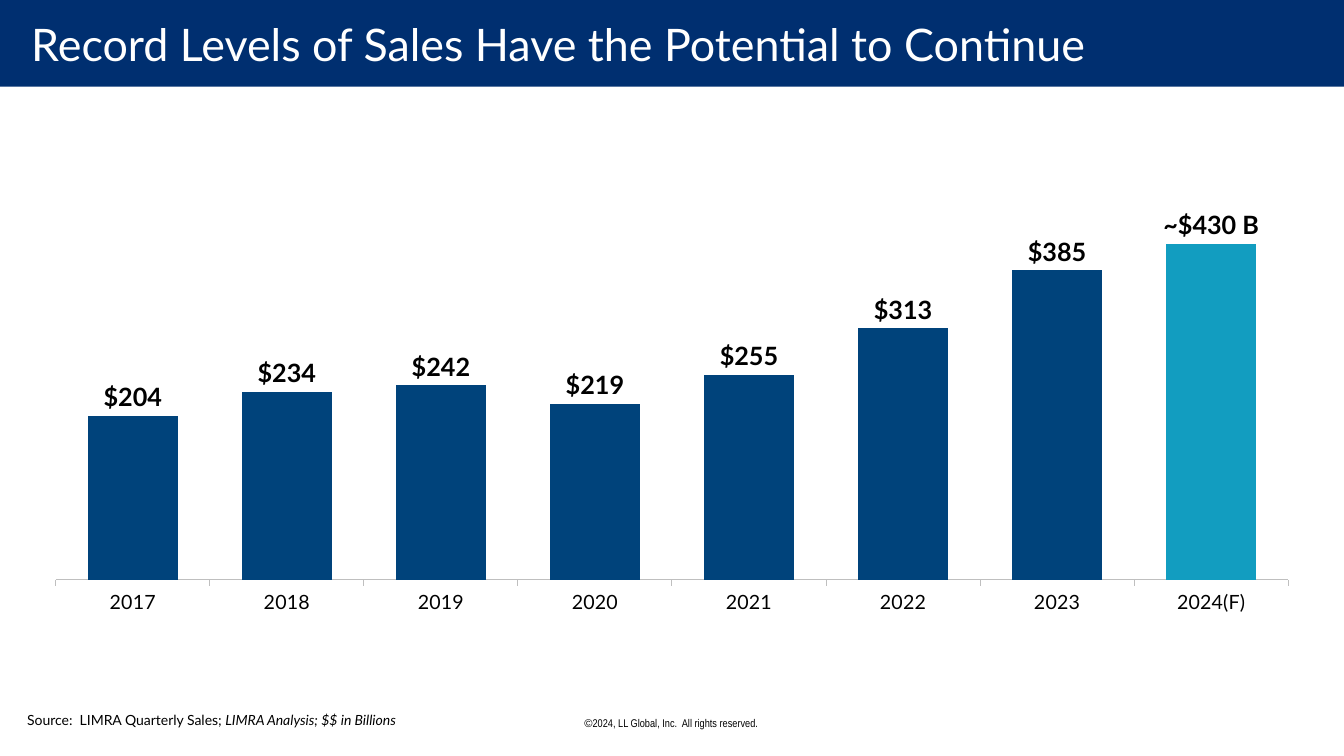
"""Build a slide with a column chart of yearly sales."""
from dataclasses import dataclass

from lxml import etree
from pptx import Presentation, util as u
from pptx.chart import data as chart_data
from pptx.dml.color import RGBColor
from pptx.enum import chart as chart_enum, shapes, text
from pptx.oxml.ns import qn

COLORS = {
    "band": "002F70",
    "bar": "00437B",
    "forecast": "129DC0",
    "axis": "BFBFBF",
    "text": "000000",
    "title": "FFFFFF",
}
SALES = {
    "2017": 204,
    "2018": 234,
    "2019": 242,
    "2020": 219,
    "2021": 255,
    "2022": 313,
    "2023": 385,
    "2024(F)": 418,
}
FORECAST_LABEL = "~$430 B"
PLOT_LAYOUT = {"x": 0.017, "y": 0.125, "w": 0.974, "h": 0.716}


@dataclass
class TextRun:
    """A piece of text with its font."""

    words: str
    font: str = "Lato"
    size: float = 10
    color: str = "text"
    bold: bool = False
    italic: bool = False


@dataclass
class TextLine:
    """A line of runs with its box and margins, in inches."""

    box: tuple[float, float, float, float]
    margins: tuple[float, float, float, float]
    runs: list[TextRun]
    align: text.PP_ALIGN = text.PP_ALIGN.LEFT
    anchor: text.MSO_ANCHOR = text.MSO_ANCHOR.TOP


TITLE = TextLine(
    (0.01, 0.13, 13.32, 0.6),
    (0.3, 0, 0.2, 0),
    [TextRun("Record Levels of Sales Have the Potential to Continue", size=32, color="title")],
    anchor=text.MSO_ANCHOR.MIDDLE,
)
FOOTNOTES = [
    TextLine(
        (5.68, 7.06, 1.96, 0.24),
        (0.1, 0.05, 0.1, 0.05),
        [
            TextRun("©", "Arial", 8),
            TextRun("2024, LL Global, Inc.  All rights reserved.", "Arial Narrow", 8),
        ],
        align=text.PP_ALIGN.CENTER,
    ),
    TextLine(
        (0.25, 7.04, 4.64, 0.37),
        (0.02, 0.02, 0, 0),
        [
            TextRun("Source:  LIMRA Quarterly Sales; "),
            TextRun("LIMRA Analysis; $$ in Billions", italic=True),
        ],
    ),
]


def rgb(name: str) -> RGBColor:
    """Return the named colour."""
    return RGBColor.from_string(COLORS[name])


def style_font(font, style: TextRun) -> None:
    """Apply the look of a run to a font."""
    font.name = style.font
    font.size = u.Pt(style.size)
    font.bold = style.bold
    font.italic = style.italic
    font.color.rgb = rgb(style.color)


def add_run(paragraph, piece: TextRun) -> None:
    """Append one run to a paragraph."""
    run = paragraph.add_run()
    run.text = piece.words
    style_font(run.font, piece)


def fill_line(shape, line: TextLine) -> None:
    """Place a text shape and write its runs."""
    shape.left, shape.top, shape.width, shape.height = map(u.Inches, line.box)
    frame = shape.text_frame
    frame.auto_size = text.MSO_AUTO_SIZE.NONE
    frame.word_wrap = True
    frame.vertical_anchor = line.anchor
    (frame.margin_left, frame.margin_top,
     frame.margin_right, frame.margin_bottom) = map(u.Inches, line.margins)
    paragraph = frame.paragraphs[0]
    paragraph.alignment = line.align
    for piece in line.runs:
        add_run(paragraph, piece)


def add_title(slide) -> None:
    """Fill the title and put the band behind it."""
    title = slide.shapes.title
    fill_line(title, TITLE)
    band = slide.shapes.add_shape(
        shapes.MSO_SHAPE.RECTANGLE, 0, 0, u.Inches(13.33), u.Inches(0.86)
    )
    band.shadow.inherit = False
    band.fill.solid()
    band.fill.fore_color.rgb = rgb("band")
    band.line.fill.background()
    title.element.addprevious(band.element)


def set_plot_layout(chart) -> None:
    """Fix the inner plot area as fractions of the chart."""
    plot_area = chart.element.find(".//" + qn("c:plotArea"))
    for old in plot_area.findall(qn("c:layout")):
        plot_area.remove(old)
    layout = etree.Element(qn("c:layout"))
    plot_area.insert(0, layout)
    manual = etree.SubElement(layout, qn("c:manualLayout"))
    settings = {"layoutTarget": "inner", "xMode": "edge", "yMode": "edge", **PLOT_LAYOUT}
    for tag, value in settings.items():
        etree.SubElement(manual, qn(f"c:{tag}")).set("val", str(value))


def add_sales_chart(slide) -> None:
    """Draw the sales columns with the forecast highlighted."""
    sales_data = chart_data.CategoryChartData()
    sales_data.categories = list(SALES)
    sales_data.add_series("Series 1", list(SALES.values()))
    chart = slide.shapes.add_chart(
        chart_enum.XL_CHART_TYPE.COLUMN_CLUSTERED,
        *map(u.Inches, (0.34, 1.07, 12.55, 5.57)), sales_data
    ).chart
    chart.has_legend = False
    chart.has_title = False
    style_font(chart.font, TextRun("", "Arial"))
    set_plot_layout(chart)

    category_axis = chart.category_axis
    category_axis.major_tick_mark = chart_enum.XL_TICK_MARK.OUTSIDE
    category_axis.format.line.color.rgb = rgb("axis")
    category_axis.format.line.width = u.Pt(0.75)
    style_font(category_axis.tick_labels.font, TextRun("", size=14))
    value_axis = chart.value_axis
    value_axis.minimum_scale, value_axis.maximum_scale = 0, 500
    value_axis.has_major_gridlines = False
    value_axis.visible = False

    plot = chart.plots[0]
    plot.gap_width, plot.overlap = 70, -27
    plot.vary_by_categories = False
    series = plot.series[0]
    forecast = series.points[len(SALES) - 1]
    for item, color in ((series, "bar"), (forecast, "forecast")):
        item.format.fill.solid()
        item.format.fill.fore_color.rgb = rgb(color)

    outside = chart_enum.XL_LABEL_POSITION.OUTSIDE_END
    label_style = TextRun(FORECAST_LABEL, size=18, bold=True)
    labels = series.data_labels
    labels.show_value = True
    labels.number_format, labels.number_format_is_linked = '"$"#,##0', False
    labels.position = outside
    style_font(labels.font, label_style)
    add_run(forecast.data_label.text_frame.paragraphs[0], label_style)
    forecast.data_label.position = outside


def main() -> None:
    """Build and save the presentation."""
    presentation = Presentation()
    presentation.slide_width = u.Inches(13.33)
    presentation.slide_height = u.Inches(7.5)
    slide = presentation.slides.add_slide(presentation.slide_layouts[5])
    add_title(slide)
    for footnote in FOOTNOTES:
        fill_line(slide.shapes.add_textbox(0, 0, 0, 0), footnote)
    add_sales_chart(slide)
    presentation.save("out.pptx")


if __name__ == "__main__":
    main()
